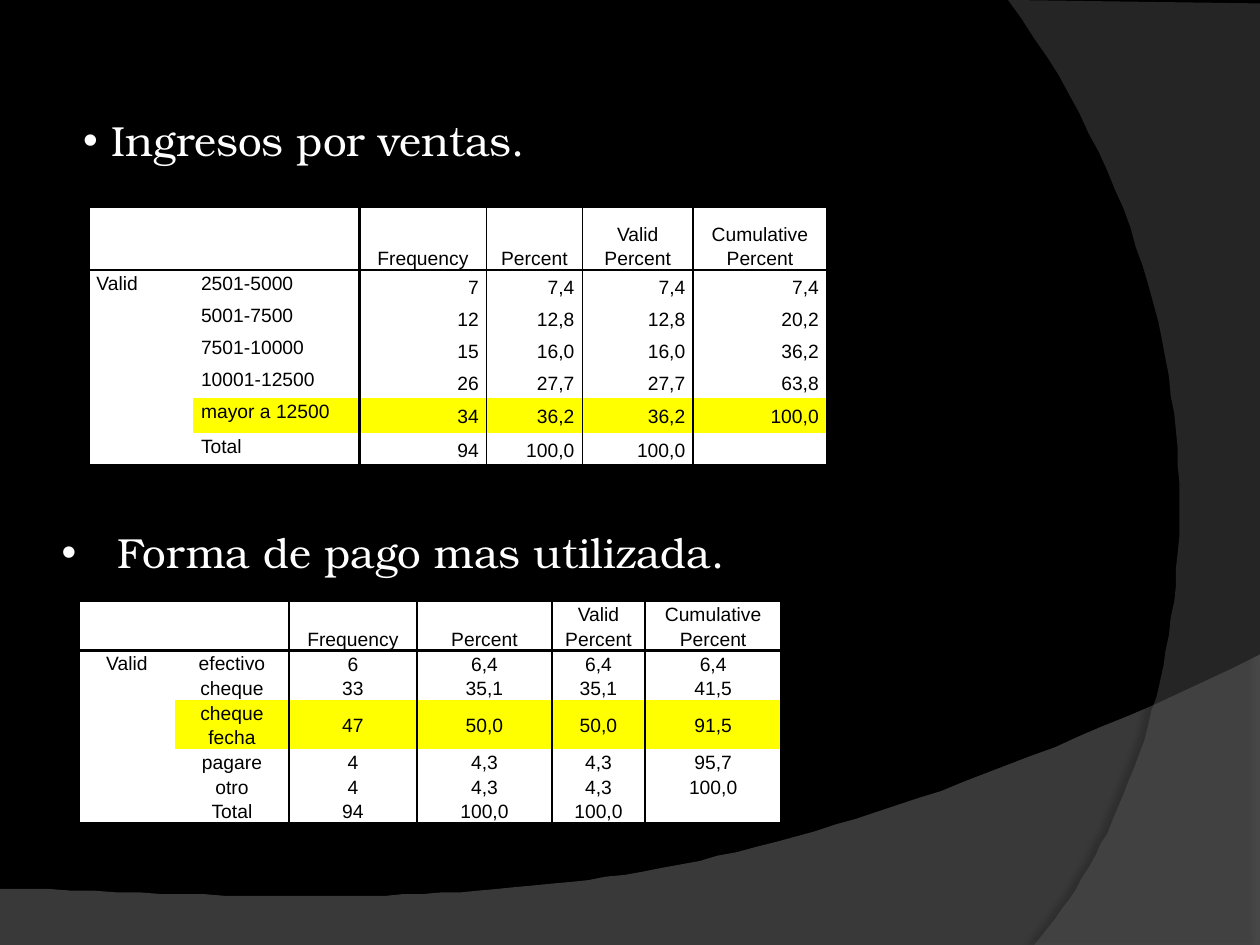
"""Builds a slide with two frequency tables on sales income and payment methods."""
from lxml.etree import SubElement
from pptx import Presentation
from pptx.dml.color import RGBColor as RGB
from pptx.enum.text import MSO_ANCHOR as ANCHOR, MSO_AUTO_SIZE as AUTO, PP_ALIGN as ALIGN
from pptx.oxml.ns import qn
from pptx.util import Pt

COLORS = {"black": "000000", "white": "FFFFFF", "mark": "FFFF00",
          "wave": "7F7F7F", "arc": "5E5E5E"}
HEADER = ["", "", "Frequency", "Percent", "Valid Percent", "Cumulative Percent"]
INCOME = [
    ["Valid", "2501-5000", "7", "7,4", "7,4", "7,4"],
    ["", "5001-7500", "12", "12,8", "12,8", "20,2"],
    ["", "7501-10000", "15", "16,0", "16,0", "36,2"],
    ["", "10001-12500", "26", "27,7", "27,7", "63,8"],
    ["", "mayor a 12500", "34", "36,2", "36,2", "100,0"],
    ["", "Total", "94", "100,0", "100,0", ""],
]
PAYMENT = [
    ["Valid", "efectivo", "6", "6,4", "6,4", "6,4"],
    ["", "cheque", "33", "35,1", "35,1", "41,5"],
    ["", "cheque fecha", "47", "50,0", "50,0", "91,5"],
    ["", "pagare", "4", "4,3", "4,3", "95,7"],
    ["", "otro", "4", "4,3", "4,3", "100,0"],
    ["", "Total", "94", "100,0", "100,0", ""],
]


def assign(obj, values):
    for name, value in values.items():
        setattr(obj, name, value)


def add_xml(parent, tag, **attrs):
    return SubElement(parent, qn(tag), {k: str(v) for k, v in attrs.items()})


def curve(p0, p1, p2, p3, steps=60):
    points = []
    for i in range(steps + 1):
        t = i / steps
        weights = ((1 - t) ** 3, 3 * t * (1 - t) ** 2, 3 * t * t * (1 - t), t ** 3)
        points.append(tuple(sum(w * p[axis] for w, p in zip(weights, (p0, p1, p2, p3)))
                            for axis in (0, 1)))
    return points


class Deck:
    heading = {"name": "TeX Gyre Bonum", "size": Pt(24), "color": "white"}
    cell = {"name": "Arial", "size": Pt(11), "color": "black"}
    margins = {"margin_left": Pt(4.5), "margin_right": Pt(4.5),
               "margin_top": 0, "margin_bottom": 0}

    def __init__(self, prs, layout):
        self.s = prs.slides.add_slide(prs.slide_layouts[layout])
        self.paint(self.s.background.fill, "black")

    def paint(self, fill, color):
        fill.solid()
        fill.fore_color.rgb = RGB.from_string(COLORS[color])

    def text(self, p, text, style):
        r = p.add_run()
        r.text = text
        assign(r.font, {k: v for k, v in style.items() if k != "color"})
        r.font.color.rgb = RGB.from_string(COLORS[style["color"]])

    def bullet(self, idx, text, box, indent):
        sp = self.s.placeholders[idx]
        assign(sp, dict(zip(("left", "top", "width", "height"), map(Pt, box))))
        tf = sp.text_frame
        assign(tf, {"auto_size": AUTO.NONE, "word_wrap": True})
        p = tf.paragraphs[0]
        assign(p, {"alignment": ALIGN.JUSTIFY, "space_before": Pt(0)})
        pPr = p._p.get_or_add_pPr()
        pPr.set("marL", str(Pt(indent)))
        pPr.set("indent", str(-Pt(indent)))
        add_xml(pPr, "a:buFont", typeface="Arial")
        add_xml(pPr, "a:buChar", char="•")
        self.text(p, text, self.heading)

    def backdrop(self, points, color, opacity, shadow):
        builder = self.s.shapes.build_freeform(*points[0], scale=Pt(1))
        builder.add_line_segments(points[1:], close=True)
        sp = builder.convert_to_shape()
        self.paint(sp.fill, color)
        sp.line.fill.background()
        spPr = sp._element.spPr
        add_xml(spPr.find(".//" + qn("a:srgbClr")), "a:alpha", val=opacity * 1000)
        sp.shadow.inherit = False
        alpha, blur, dist, angle = shadow
        effect = add_xml(spPr.find(qn("a:effectLst")), "a:outerShdw",
                         blurRad=Pt(blur), dist=Pt(dist), dir=angle * 60000,
                         algn="ctr", rotWithShape=0)
        rgb = add_xml(effect, "a:srgbClr", val=COLORS["black"])
        add_xml(rgb, "a:alpha", val=alpha * 1000)
        self.s.shapes._spTree.insert(2, sp._element)

    def borders(self, cell, widths):
        tcPr = cell._tc.get_or_add_tcPr()
        for side, width in zip("LRTB", widths):
            ln = add_xml(tcPr, f"a:ln{side}", w=Pt(width))
            if width:
                add_xml(add_xml(ln, "a:solidFill"), "a:srgbClr", val=COLORS["black"])
            else:
                add_xml(ln, "a:noFill")

    def table(self, left, top, cols, heights, body, marked, label_align, value_align):
        rows = [HEADER] + body
        frame = self.s.shapes.add_table(len(rows), len(cols), Pt(left), Pt(top),
                                        Pt(sum(cols)), Pt(sum(heights)))
        table = frame.table
        assign(table, {"first_row": False, "horz_banding": False})
        for col, width in zip(table.columns, cols):
            col.width = Pt(width)
        for row, height in zip(table.rows, heights):
            row.height = Pt(height)
        vertical = [1.5, 0, 1.5, 1, 1, 1, 1.5]
        horizontal = [1.5, 1.5] + [0] * (len(rows) - 2) + [1.5]
        for i, row in enumerate(rows):
            for j, text in enumerate(row):
                cell = table.cell(i, j)
                label = j < 2
                self.borders(cell, vertical[j:j + 2] + horizontal[i:i + 2])
                self.paint(cell.fill, "mark" if i == marked and j else "white")
                assign(cell, self.margins)
                cell.vertical_anchor = (ANCHOR.BOTTOM if i == 0 else
                                        ANCHOR.TOP if label else ANCHOR.MIDDLE)
                p = cell.text_frame.paragraphs[0]
                align = ALIGN.CENTER if i == 0 else label_align if label else value_align
                assign(p, {"alignment": align, "line_spacing": 1.15})
                if text:
                    self.text(p, text, self.cell)
                else:
                    p._p.get_or_add_endParaRPr().set("sz", "1100")
        table.cell(0, 0).merge(table.cell(0, 1))


def main():
    prs = Presentation()
    assign(prs, {"slide_width": Pt(720), "slide_height": Pt(540)})
    deck = Deck(prs, 3)
    for ph in list(deck.s.placeholders):
        if ph.placeholder_format.idx not in (1, 2):
            ph._element.getparent().remove(ph._element)

    arc = curve((591, 540), (673, 446), (733, 216), (576, 0))
    deck.backdrop([(720, 1.5), (720, 540)] + arc, "arc", 40, (45, 4, 4, 180))
    wave = curve((720, 374.5), (402.5, 525), (281.5, 517.5), (0, 507.5))
    deck.backdrop([(0, 540), (720, 540)] + wave, "wave", 45, (35, 4, 3.5, 270))

    deck.bullet(1, "Ingresos por ventas.", (40.3, 62, 607.7, 152.6), 16)
    deck.bullet(2, "Forma de pago mas utilizada.", (28, 297.4, 607.7, 152.6), 32)
    deck.table(50.6, 118.3, [59.8, 95, 72.7, 54.7, 63.4, 76.3],
               [36] + [18.3] * 4 + [20, 18.3], INCOME, 5, ALIGN.LEFT, ALIGN.RIGHT)
    deck.table(44.8, 343.5, [55.4, 64.8, 73.4, 77, 53.3, 77.8],
               [26, 14, 14, 28, 14, 14, 14], PAYMENT, 3, ALIGN.CENTER, ALIGN.CENTER)
    prs.save("out.pptx")


if __name__ == "__main__":
    main()
